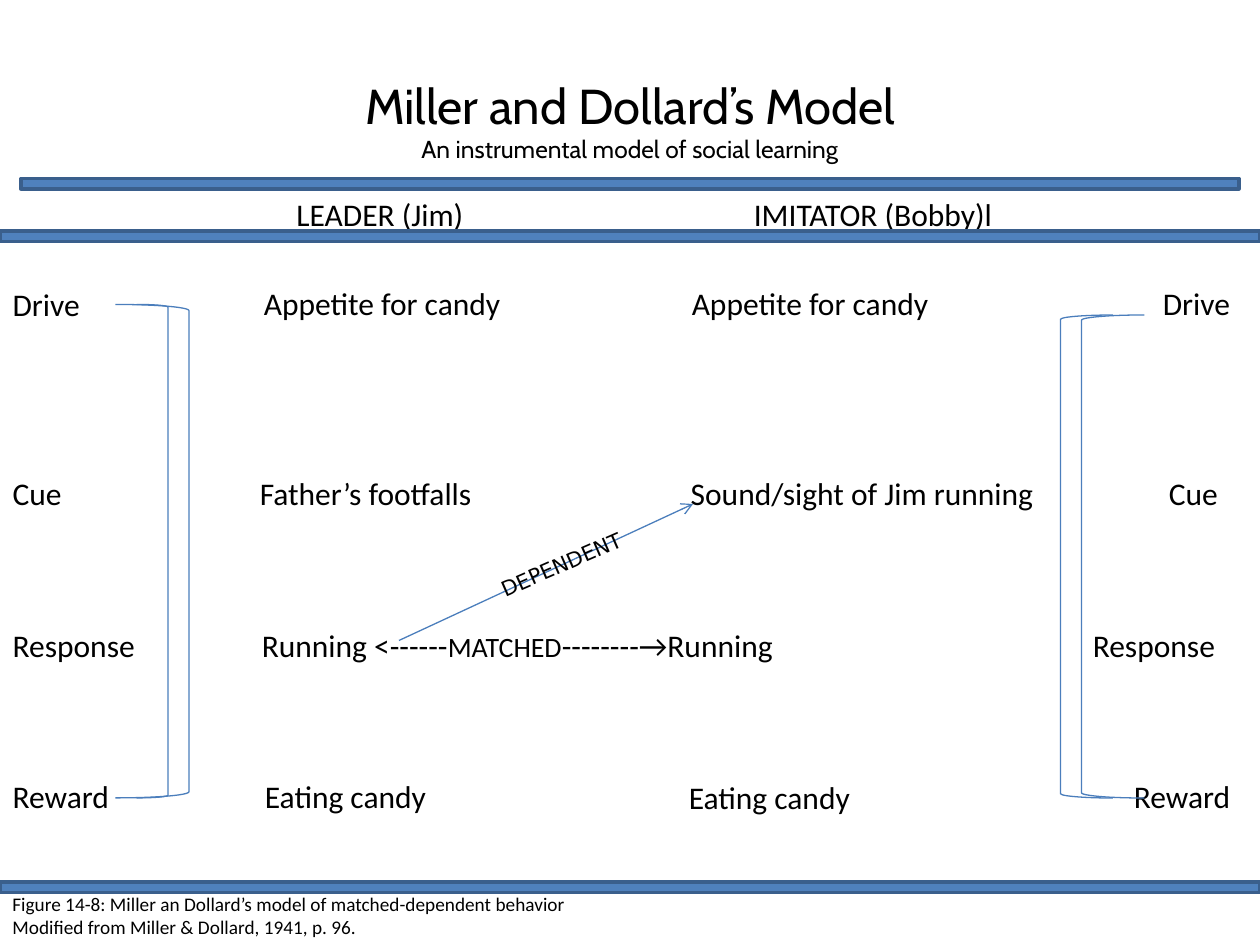
from lxml import etree
from pptx import Presentation
from pptx.dml.color import RGBColor
from pptx.enum.shapes import MSO_CONNECTOR, MSO_SHAPE
from pptx.enum.text import MSO_ANCHOR, MSO_AUTO_SIZE, PP_ALIGN
from pptx.oxml.ns import qn
from pptx.util import Pt

RECT = MSO_SHAPE.RECTANGLE
LEFT, RIGHT = MSO_SHAPE.LEFT_BRACKET, MSO_SHAPE.RIGHT_BRACKET
STRAIGHT = MSO_CONNECTOR.STRAIGHT
BOTTOM, TOP = MSO_ANCHOR.BOTTOM, MSO_ANCHOR.TOP
FIXED = MSO_AUTO_SIZE.NONE
CENTER, START = PP_ALIGN.CENTER, PP_ALIGN.LEFT

COLORS = {"text": "000000", "bar": "4F81BD", "edge": "3A5F8C", "line": "4B7EBC"}


def color(name):
    return RGBColor.from_string(COLORS[name])


def place(shape, box):
    shape.left, shape.top, shape.width, shape.height = map(Pt, box)


def frame(shape, anchor=TOP):
    text = shape.text_frame
    text.word_wrap = True
    text.auto_size = FIXED
    text.vertical_anchor = anchor
    text.margin_left = text.margin_right = Pt(7.2)
    text.margin_top = text.margin_bottom = Pt(3.6)
    return text


def write(text, i, runs, size, face="Calibri", align=START, gap=0, indent=0):
    """Fill paragraph i; runs are (words, size or None) pairs."""
    para = text.paragraphs[0] if i == 0 else text.add_paragraph()
    para.alignment = align
    para.space_before = Pt(gap)
    props = para._p.get_or_add_pPr()
    props.set("marL", str(Pt(indent)))
    props.set("indent", "0")
    etree.SubElement(props, qn("a:buNone"))
    para.font.size = Pt(size)
    para.font.name = face
    para.font.color.rgb = color("text")
    for words, own in runs:
        run = para.add_run()
        run.text = words
        if own:
            run.font.size = Pt(own)


def add_title(slide, box):
    title = slide.shapes.title
    place(title, box)
    text = frame(title, BOTTOM)
    write(text, 0, [("Miller and Dollard’s Model", None)], 28, "Cabin", CENTER)
    write(text, 1, [("An instrumental model of social learning", None)],
          14, "Cabin", CENTER)


def add_bar(slide, box):
    bar = slide.shapes.add_shape(RECT, *map(Pt, box))
    bar.shadow.inherit = False
    bar.fill.solid()
    bar.fill.fore_color.rgb = color("bar")
    bar.line.color.rgb = color("edge")
    bar.line.width = Pt(2)


def add_heads(slide, box):
    left, top, width, height = box
    for x, words in ((150.3, "LEADER (Jim)"), (411.7, "IMITATOR (Bobby)l")):
        head = slide.shapes.add_textbox(
            Pt(left + x), Pt(top), Pt(width / 4), Pt(height))
        write(frame(head), 0, [(words, None)], 18)


def add_rows(slide, box):
    left, top, width, height = box
    gaps = (0, 86.6, 65.6, 64.4)
    skip = 152  # gap that passes over the third row
    match = [("Running <------", None), ("MATCHED", 16),
             ("--------→Running", None)]
    # Each column: left, width, then (gap, indent, words or runs)
    cols = [
        (0, 120, zip(gaps, (0,) * 4, ("Drive", "Cue", "Response", "Reward"))),
        (141.4, 320, zip(gaps, (2.3, 0, 1.1, 2.9),
                         ("Appetite for candy", "Father’s footfalls",
                          match, "Eating candy"))),
        (386.5, 220, zip((0, gaps[1], skip), (1.7, 1.1, 0),
                         ("Appetite for candy", "Sound/sight of Jim running",
                          "Eating candy"))),
        (617.4, 102.6, zip(gaps, (40, 43.4, 0, 23.4),
                           ("Drive", "Cue", "Response", "Reward"))),
    ]
    for n, (x, wide, cells) in enumerate(cols):
        if n == 0:
            col = slide.placeholders[1]
            place(col, (left, top, wide, height))
        else:
            col = slide.shapes.add_textbox(
                *map(Pt, (left + x, top, wide, height)))
        text = frame(col)
        for i, (gap, indent, words) in enumerate(cells):
            runs = [(words, None)] if isinstance(words, str) else words
            write(text, i, runs, 18, gap=gap, indent=indent)


def add_pair(slide, kind, box, inner):
    """Two nested brackets: the box, and one given by its left and width."""
    left, top, width, height = box
    for x, w in ((left, width), inner):
        mark = slide.shapes.add_shape(kind, *map(Pt, (x, top, w, height)))
        mark.shadow.inherit = False
        mark.fill.background()
        mark.line.color.rgb = color("line")
        mark.line.width = Pt(0.75)


def add_link(slide, box):
    """Arrow from the lower left to the upper right, with its label."""
    x, y, w, h = box
    link = slide.shapes.add_connector(STRAIGHT, Pt(x), Pt(y + h), Pt(x + w), Pt(y))
    link.line.color.rgb = color("line")
    link.line.width = Pt(0.75)
    etree.SubElement(link.line._get_or_add_ln(), qn("a:tailEnd"), type="arrow")
    etree.SubElement(link._element.spPr, qn("a:effectLst"))
    label = slide.shapes.add_textbox(Pt(x + 48), Pt(y + 20), Pt(106), Pt(21.8))
    label.rotation = 336.4
    write(frame(label), 0, [("DEPENDENT", None)], 12, "DejaVu Sans")


def add_note(slide, box):
    text = frame(slide.shapes.add_textbox(*map(Pt, box)))
    lines = ["Figure 14-8: Miller an Dollard’s model of matched-dependent behavior",
             "Modified from Miller & Dollard, 1941, p. 96."]
    for i, line in enumerate(lines):
        write(text, i, [(line, None)], 11)


def main():
    deck = Presentation()
    deck.slide_width, deck.slide_height = Pt(720), Pt(540)
    slide = deck.slides.add_slide(deck.slide_layouts[1])

    # Title and column heads
    add_title(slide, (0, 5.8, 720, 91.4))
    add_bar(slide, (12, 102, 696, 6))
    add_heads(slide, (12, 108, 696, 29))
    add_bar(slide, (0, 132, 720, 6))

    # Stages, brackets and arrow
    add_rows(slide, (0, 159, 720, 313))
    add_pair(slide, LEFT, (606, 180, 30, 276), (618, 36))
    add_pair(slide, RIGHT, (66, 174, 42, 282), (78, 18))
    add_link(slide, (228, 288, 168, 78))

    # Caption
    add_note(slide, (0, 506.4, 720, 33.6))
    add_bar(slide, (0, 504, 720, 6))
    deck.save("out.pptx")


if __name__ == "__main__":
    main()
